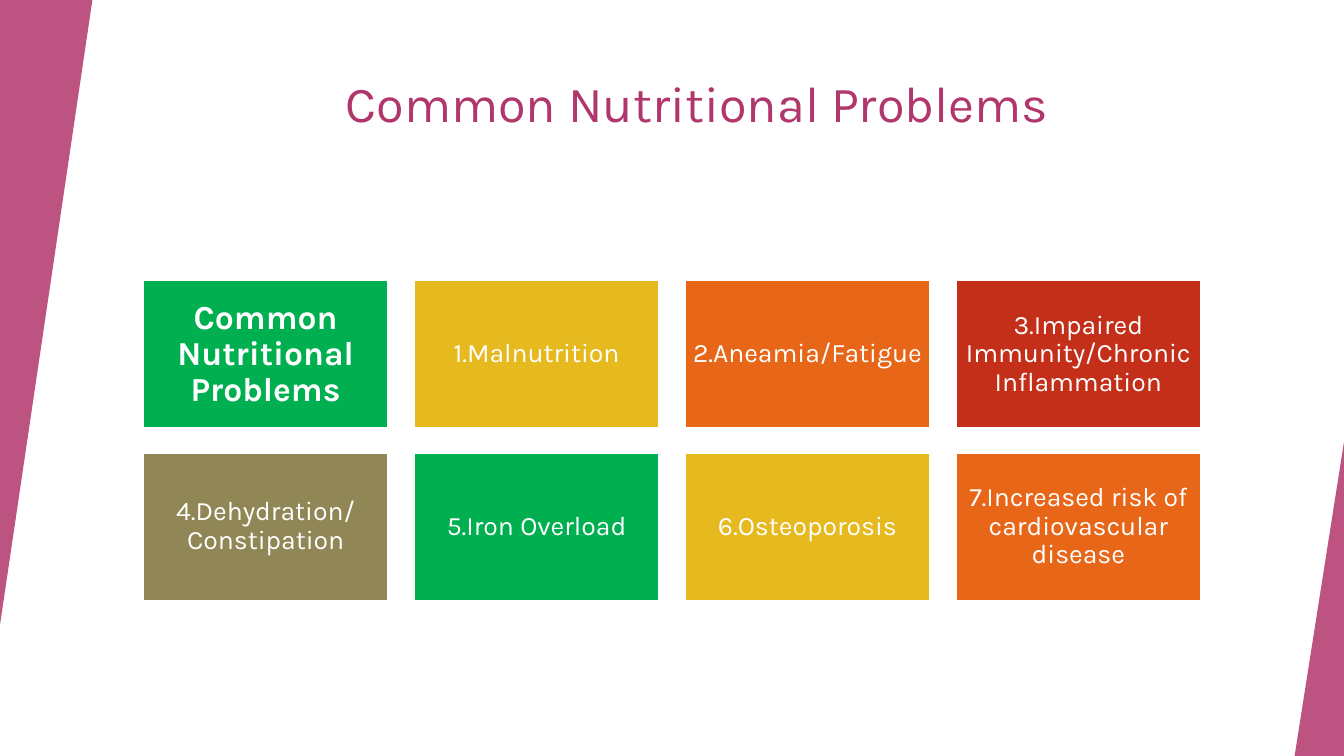
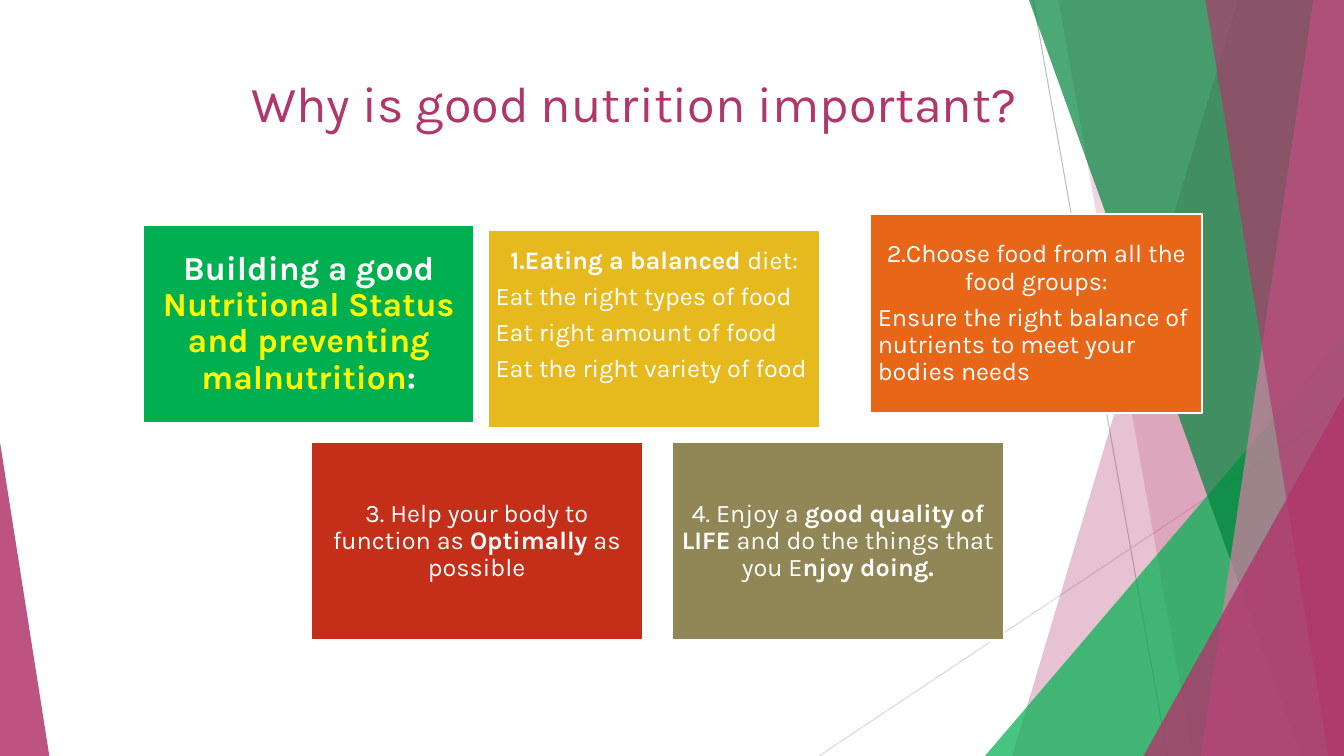
"""Build two slides on nutrition with coloured tiles and slanted decoration."""
from dataclasses import dataclass
from typing import Any

import pptx
import pptx.dml.color
import pptx.enum.shapes
import pptx.enum.text
import pptx.oxml.ns
import pptx.util
from lxml import etree

RGB = pptx.dml.color.RGBColor
SHAPE = pptx.enum.shapes.MSO_SHAPE
ALIGN = pptx.enum.text.PP_ALIGN
ANCHOR = pptx.enum.text.MSO_ANCHOR

WHITE = RGB(0xFF, 0xFF, 0xFF)
MAGENTA = RGB(0xB1, 0x36, 0x6C)
PINK = RGB(0xD8, 0x7F, 0xA6)
GREEN = RGB(0x00, 0xB0, 0x50)
DARK_GREEN = RGB(0x00, 0x84, 0x3C)
YELLOW = RGB(0xE6, 0xB9, 0x1E)
ORANGE = RGB(0xE7, 0x66, 0x18)
RED = RGB(0xC4, 0x2F, 0x1A)
OLIVE = RGB(0x91, 0x86, 0x55)
BRIGHT_YELLOW = RGB(0xFF, 0xFF, 0x00)
GREY = RGB(0xBF, 0xBF, 0xBF)
LIGHT_GREY = RGB(0xD9, 0xD9, 0xD9)
TILE_COLOURS = [GREEN, YELLOW, ORANGE, RED, OLIVE]

EMU_PER_PX = 9525
WIDTH, HEIGHT = 1280, 720
FONT = "Karla"


@dataclass(frozen=True)
class Run:
    text: str
    bold: bool = False
    colour: RGB = WHITE


@dataclass(frozen=True)
class Para:
    runs: tuple[Run, ...]
    align: Any = ALIGN.CENTER


@dataclass(frozen=True)
class Tile:
    x: int
    y: int
    w: int
    h: int
    paras: tuple[Para, ...]
    colour: RGB
    size: int
    inset: int = 7
    bottom: int = 7


@dataclass(frozen=True)
class Triangle:
    x: int
    y: int
    w: int
    h: int
    apex: int
    colour: RGB
    opacity: int
    rotation: int = 0


@dataclass(frozen=True)
class Facet:
    top: int
    bottom: int
    colour: RGB
    opacity: int


@dataclass(frozen=True)
class Ray:
    x1: int
    y1: int
    x2: int
    y2: int
    colour: RGB


RAYS = [Ray(984, 0, 1112, HEIGHT, GREY), Ray(WIDTH, 387, 780, HEIGHT, LIGHT_GREY)]
DECORATION = [
    Facet(1179, 964, MAGENTA, 30),
    Facet(1008, 1136, MAGENTA, 20),
    Triangle(938, 320, 342, 400, 1, GREEN, 72),
    Facet(980, 1239, DARK_GREEN, 70),
    Facet(1251, 1144, PINK, 70),
    Facet(1148, 1265, MAGENTA, 65),
    Triangle(1089, 377, 191, 343, 1, MAGENTA, 80),
    Triangle(0, 421, 47, 299, 0, MAGENTA, 85),
]
SIDE_WEDGES = [
    Triangle(0, 0, 88, 595, 1, MAGENTA, 85, rotation=180),
    Triangle(1233, 421, 47, 299, 1, MAGENTA, 85),
]


def px(n: int) -> pptx.util.Emu:
    return pptx.util.Emu(n * EMU_PER_PX)


def set_all(obj: Any, fmt: dict[str, Any]) -> None:
    for name, value in fmt.items():
        setattr(obj, name, value)


def paint(sp: Any, colour: RGB, opacity: int = 100) -> None:
    sp.shadow.inherit = False
    sp.line.fill.background()
    sp.fill.solid()
    sp.fill.fore_color.rgb = colour
    if opacity < 100:
        clr = sp.fill._xPr.find(".//" + pptx.oxml.ns.qn("a:srgbClr"))
        etree.SubElement(clr, pptx.oxml.ns.qn("a:alpha"), val=str(opacity * 1000))


def draw_triangle(s: Any, t: Triangle) -> None:
    sp = s.shapes.add_shape(SHAPE.ISOSCELES_TRIANGLE, px(t.x), px(t.y), px(t.w), px(t.h))
    sp.adjustments[0] = t.apex
    sp.rotation = t.rotation
    paint(sp, t.colour, t.opacity)


def draw_facet(s: Any, f: Facet) -> None:
    builder = s.shapes.build_freeform(f.top, 0, scale=EMU_PER_PX)
    builder.add_line_segments([(WIDTH, 0), (WIDTH, HEIGHT), (f.bottom, HEIGHT)])
    paint(builder.convert_to_shape(), f.colour, f.opacity)


def draw_ray(s: Any, ray: Ray) -> None:
    line = s.shapes.add_connector(
        pptx.enum.shapes.MSO_CONNECTOR.STRAIGHT,
        px(ray.x1), px(ray.y1), px(ray.x2), px(ray.y2),
    )
    line.line.color.rgb = ray.colour
    line.line.width = pptx.util.Pt(0.75)
    etree.SubElement(line._element.spPr, pptx.oxml.ns.qn("a:effectLst"))


def draw_decoration(s: Any) -> None:
    for ray in RAYS:
        draw_ray(s, ray)
    for item in DECORATION:
        if isinstance(item, Facet):
            draw_facet(s, item)
        else:
            draw_triangle(s, item)


def write(tf: Any, paras: tuple[Para, ...], size: int, spacing: float) -> None:
    for i, para in enumerate(paras):
        p = tf.add_paragraph() if i else tf.paragraphs[0]
        set_all(p, {"alignment": para.align, "line_spacing": spacing})
        if i:
            p.space_before = pptx.util.Pt(round(size * 0.35, 1))
        for run in para.runs:
            r = p.add_run()
            r.text = run.text
            set_all(r.font, {"name": FONT, "size": pptx.util.Pt(size), "bold": run.bold})
            r.font.color.rgb = run.colour


def draw_title(s: Any, text: str, x: int, w: int) -> None:
    tf = s.shapes.add_textbox(px(x), px(64), px(w), px(115)).text_frame
    set_all(tf, {"word_wrap": True, "vertical_anchor": ANCHOR.TOP})
    write(tf, (Para((Run(text, colour=MAGENTA),)),), 36, 1.0)


def draw_tile(s: Any, t: Tile) -> None:
    sp = s.shapes.add_shape(SHAPE.RECTANGLE, px(t.x), px(t.y), px(t.w), px(t.h))
    paint(sp, t.colour)
    sp.line.color.rgb = WHITE
    sp.line.width = pptx.util.Pt(1.5)
    tf = sp.text_frame
    set_all(tf, {
        "word_wrap": True,
        "vertical_anchor": ANCHOR.MIDDLE,
        "margin_left": px(t.inset),
        "margin_right": px(t.inset),
        "margin_top": px(t.inset),
        "margin_bottom": px(t.bottom),
    })
    write(tf, t.paras, t.size, 0.9)


def problems_slide(s: Any) -> None:
    labels = [
        "Common Nutritional Problems",
        "1.Malnutrition",
        "2.Aneamia/Fatigue",
        "3.Impaired Immunity/Chronic Inflammation",
        "4.Dehydration/ Constipation",
        "5.Iron Overload",
        "6.Osteoporosis",
        "7.Increased risk of cardiovascular disease",
    ]
    draw_title(s, "Common Nutritional Problems", 129, 1070)
    for wedge in SIDE_WEDGES:
        draw_triangle(s, wedge)
    for i, label in enumerate(labels):
        row, col = divmod(i, 4)
        heading = i == 0
        draw_tile(s, Tile(
            136 + col * 258, 267 + row * 164, 234, 141,
            (Para((Run(label, heading),)),),
            TILE_COLOURS[i % len(TILE_COLOURS)],
            24 if heading else 19,
        ))


def importance_slide(s: Any) -> None:
    places = [(136, 214), (465, 219), (829, 204), (296, 421), (640, 421)]
    texts = [
        (Para((
            Run("Building a good ", True),
            Run("Nutritional Status and preventing malnutrition", True, BRIGHT_YELLOW),
            Run(":", True),
        )),),
        (
            Para((Run("1.Eating a balanced ", True), Run("diet:"))),
            Para((Run("Eat the right types of food"),), ALIGN.LEFT),
            Para((Run("Eat right amount of food"),), ALIGN.LEFT),
            Para((Run("Eat the right variety of food"),), ALIGN.LEFT),
        ),
        (
            Para((Run("2.Choose food from all the food groups:"),)),
            Para((Run("Ensure the right balance of nutrients to meet your bodies needs"),),
                 ALIGN.LEFT),
        ),
        (Para((
            Run("3. Help your body to function as "),
            Run("Optimally", True),
            Run(" as possible"),
        )),),
        (Para((
            Run("4. Enjoy a "),
            Run("good quality of LIFE", True),
            Run(" and do the things that you E"),
            Run("njoy doing.", True),
        )),),
    ]
    draw_decoration(s)
    draw_title(s, "Why is good nutrition important?", 122, 964)
    for i, ((x, y), paras, colour) in enumerate(zip(places, texts, TILE_COLOURS)):
        draw_tile(s, Tile(
            x, y, 316, 189, paras, colour,
            size=24 if i == 0 else 18,
            bottom=34 if i == 1 else 7,
        ))


def main() -> None:
    prs = pptx.Presentation()
    set_all(prs, {"slide_width": px(WIDTH), "slide_height": px(HEIGHT)})
    for build in (problems_slide, importance_slide):
        build(prs.slides.add_slide(prs.slide_layouts[6]))
    prs.save("out.pptx")


if __name__ == "__main__":
    main()
